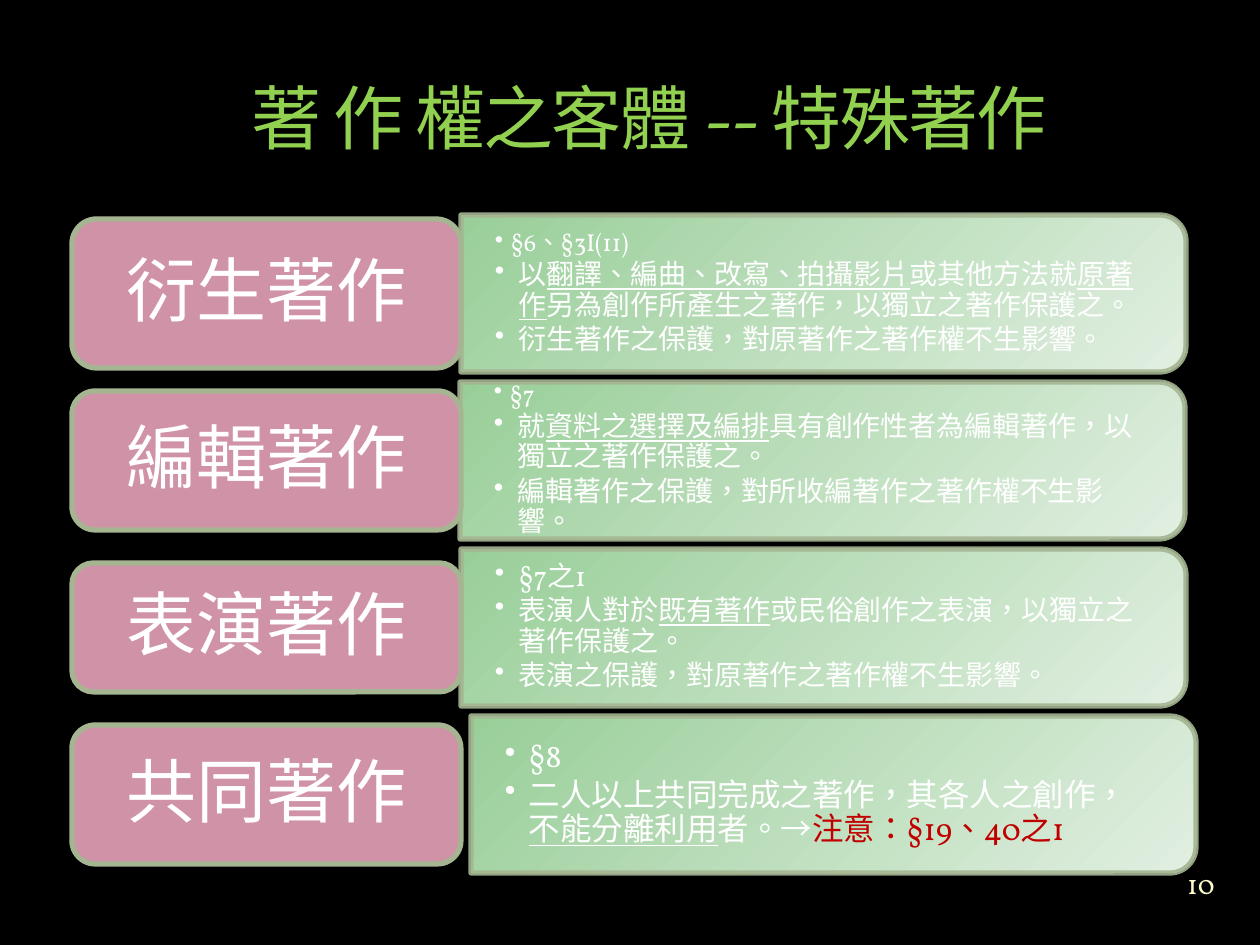
"""Build a slide on four special kinds of copyrighted works."""
from dataclasses import dataclass
from typing import NamedTuple

from lxml import etree
from pptx import Presentation
from pptx.dml.color import RGBColor
from pptx.enum.shapes import MSO_SHAPE
from pptx.enum.text import MSO_ANCHOR, MSO_AUTO_SIZE, PP_ALIGN
from pptx.oxml.ns import qn
from pptx.util import Emu, Pt

ROUND = MSO_SHAPE.ROUNDED_RECTANGLE
TAB = MSO_SHAPE.ROUND_2_SAME_RECTANGLE
MIDDLE, BOTTOM = MSO_ANCHOR.MIDDLE, MSO_ANCHOR.BOTTOM
CENTER, LEFT = PP_ALIGN.CENTER, PP_ALIGN.LEFT
FIXED = MSO_AUTO_SIZE.NONE
SCALE = 914400 / 126
SERIF, SANS = "Vollkorn", "Noto Sans CJK SC"
COLORS = {
    "back": "000000", "title": "92D050", "text": "FFFFFF", "alert": "C00000",
    "label": "D092A7", "edge": "A5B592", "dark": "99CE99", "light": "E1EFE1",
    "page": "FEFAC9",
}
BAR_W, BAR_H, BAR_TOP, STEP = 725, 157, 215, 167
LABEL_X, LABEL_W = 72, 389


class Bit(NamedTuple):
    text: str
    under: bool = False
    color: str = "text"
    font: str = SERIF


class Line(NamedTuple):
    bits: list[Bit]
    size: int = 16
    indent: int = 24


@dataclass
class Work:
    name: str
    top: int
    height: int
    bar_x: int
    lines: list[Line]


WORKS = [
    Work("衍生著作", 219, 149, 461, [
        Line([Bit("§6、§3I(11)")], 14, 16),
        Line([Bit("以"), Bit("翻譯、編曲、改寫、拍攝影片", True),
              Bit("或其他方法就"), Bit("原著作", True),
              Bit("另為創作所產生之著作，以獨立之著作保護之。")]),
        Line([Bit("衍生著作之保護，對原著作之著作權不生影響。")]),
    ]),
    Work("編輯著作", 391, 139, 460, [
        Line([Bit("§7")], 14, 16),
        Line([Bit("就"), Bit("資料之選擇及編排", True),
              Bit("具有創作性者為編輯著作，以獨立之著作保護之。")]),
        Line([Bit("編輯著作之保護，對所收編著作之著作權不生影響。")]),
    ]),
    Work("表演著作", 563, 129, 461, [
        Line([Bit("§7之1")]),
        Line([Bit("表演人對於"), Bit("既有著作", True),
              Bit("或民俗創作之表演，以獨立之著作保護之。")]),
        Line([Bit("表演之保護，對原著作之著作權不生影響。")]),
    ]),
    Work("共同著作", 725, 139, 471, [
        Line([Bit("§8")], 18),
        Line([Bit("二人以上共同完成之著作，其各人之創作，"),
              Bit("不能分離利用", True), Bit("者。"), Bit("→", font=SANS),
              Bit("注意：", color="alert", font=SANS),
              Bit("§19、40之1", color="alert")], 18),
    ]),
]


def px(size: float) -> Emu:
    """Turn pixels into EMU."""
    return Emu(round(size * SCALE))


def rgb(name: str) -> RGBColor:
    """Look up a named colour."""
    return RGBColor.from_string(COLORS[name])


def style(run, size: int, color: str, font: str = SERIF) -> None:
    """Format one run of text."""
    run.font.size = Pt(size)
    run.font.name = font
    run.font.color.rgb = rgb(color)
    run._r.get_or_add_rPr().set("lang", "zh-TW")


def setup(frame, anchor, side: int = 0, edge: int = 0) -> None:
    """Set wrapping, anchor and insets of a text frame."""
    frame.word_wrap = True
    frame.auto_size = FIXED
    frame.vertical_anchor = anchor
    frame.margin_left = frame.margin_right = px(side)
    frame.margin_top = frame.margin_bottom = px(edge)


def write(frame, text: str, size: int, color: str) -> None:
    """Put one centred line in a text frame."""
    frame.text = text
    para = frame.paragraphs[0]
    para.alignment = CENTER
    style(para.runs[0], size, color)


def outline(shape) -> None:
    """Give a shape its border and drop its shadow."""
    shape.shadow.inherit = False
    shape.line.color.rgb = rgb("edge")
    shape.line.width = Pt(3)


def draw_bar(shapes, left: int, top: int) -> None:
    """Draw a gradient bar with rounded right corners."""
    shift = (BAR_W - BAR_H) / 2
    bar = shapes.add_shape(TAB, px(left + shift), px(top - shift),
                           px(BAR_H), px(BAR_W))
    bar.rotation = 90
    outline(bar)
    bar.fill.gradient()
    bar.fill.gradient_angle = 45
    for stop, name in zip(bar.fill.gradient_stops, ("dark", "light")):
        stop.color.rgb = rgb(name)
    tint = bar.line._ln.find(".//" + qn("a:srgbClr"))
    etree.SubElement(tint, qn("a:alpha")).set("val", "90000")


def draw_list(shapes, left: int, top: int, lines: list[Line]) -> None:
    """Write the bulleted lines on a bar."""
    box = shapes.add_textbox(px(left), px(top), px(717), px(142))
    frame = box.text_frame
    setup(frame, MIDDLE, 34, 18)
    for i, line in enumerate(lines):
        para = frame.add_paragraph() if i else frame.paragraphs[0]
        para.level = 1
        para.alignment = LEFT
        para.line_spacing = 0.9
        para.space_after = Pt(round(line.size * 0.15, 1))
        props = para._p.get_or_add_pPr()
        props.set("marL", str(px(line.indent)))
        props.set("indent", str(-px(line.indent)))
        props.set("hangingPunct", "0")
        etree.SubElement(props, qn("a:buChar")).set("char", "•")
        for bit in line.bits:
            run = para.add_run()
            run.text = bit.text
            style(run, line.size, bit.color, bit.font)
            run.font.underline = bit.under


def draw_label(shapes, work: Work) -> None:
    """Draw the rounded name box of a work."""
    label = shapes.add_shape(ROUND, px(LABEL_X), px(work.top),
                             px(LABEL_W), px(work.height))
    outline(label)
    label.fill.solid()
    label.fill.fore_color.rgb = rgb("label")
    setup(label.text_frame, MIDDLE, 29, 17)
    write(label.text_frame, work.name, 40, "text")
    para = label.text_frame.paragraphs[0]
    para.line_spacing = 0.9
    para.space_after = Pt(14)


def main() -> None:
    """Build and save the slide."""
    deck = Presentation()
    deck.slide_width, deck.slide_height = px(1260), px(945)
    slide = deck.slides.add_slide(deck.slide_layouts[5])
    slide.background.fill.solid()
    slide.background.fill.fore_color.rgb = rgb("back")
    shapes = slide.shapes

    title = shapes.title
    title.left, title.top = px(63), px(38)
    title.width, title.height = px(1172), px(127)
    setup(title.text_frame, BOTTOM, 13, 6)
    write(title.text_frame, "著 作 權之客體 -- 特殊著作", 40, "title")
    run = title.text_frame.paragraphs[0].runs[0]
    run._r.get_or_add_rPr().set("spc", "-100")

    for i, work in enumerate(WORKS):
        top = BAR_TOP + i * STEP
        draw_bar(shapes, work.bar_x, top)
        draw_list(shapes, work.bar_x, top + 7, work.lines)
        draw_label(shapes, work)

    page = shapes.add_textbox(px(1159), px(852), px(84), px(63))
    setup(page.text_frame, MIDDLE)
    write(page.text_frame, "10", 16, "page")
    deck.save("out.pptx")


if __name__ == "__main__":
    main()
